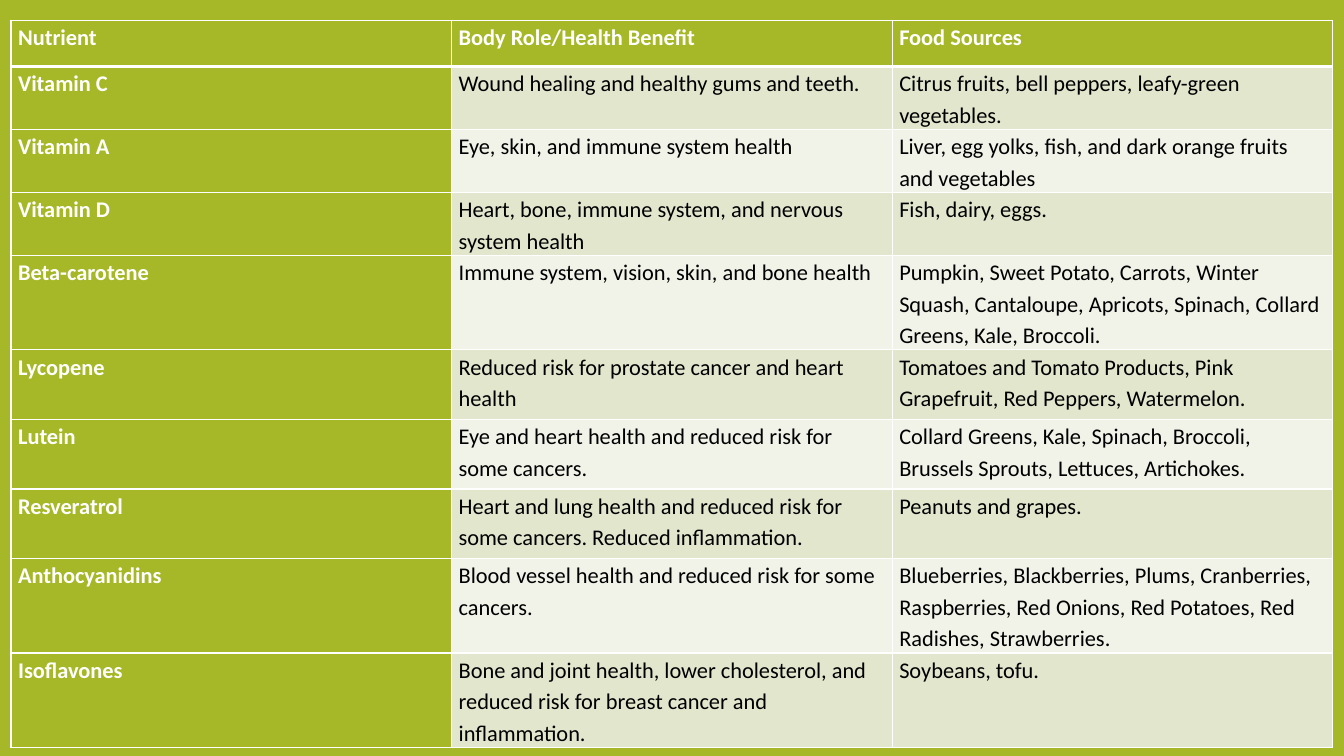
"""Build a slide with a table of nutrients, their benefits and food sources."""
from dataclasses import dataclass

import lxml.etree
import pptx
import pptx.dml.color
import pptx.oxml.ns
import pptx.table
import pptx.util

HUES = {
    "green": "A6B727",
    "dark": "E1E6CD",
    "light": "F1F3E8",
    "white": "FFFFFF",
    "black": "000000",
}
FONT = "Calibri"
WIDTH = 4.37


@dataclass
class Entry:
    name: str
    role: str
    foods: str
    height: float


ROWS = [
    Entry("Nutrient", "Body Role/Health Benefit", "Food Sources", 0.46),
    Entry("Vitamin C", "Wound healing and healthy gums and teeth.",
          "Citrus fruits, bell peppers, leafy-green vegetables.", 0.59),
    Entry("Vitamin A", "Eye, skin, and immune system health",
          "Liver, egg yolks, fish, and dark orange fruits and vegetables", 0.59),
    Entry("Vitamin D", "Heart, bone, immune system, and nervous system health",
          "Fish, dairy, eggs.", 0.59),
    Entry("Beta-carotene", "Immune system, vision, skin, and bone health",
          "Pumpkin, Sweet Potato, Carrots, Winter Squash, Cantaloupe, Apricots, "
          "Spinach, Collard Greens, Kale, Broccoli.", 0.93),
    Entry("Lycopene", "Reduced risk for prostate cancer and heart health",
          "Tomatoes and Tomato Products, Pink Grapefruit, Red Peppers, Watermelon.", 0.69),
    Entry("Lutein", "Eye and heart health and reduced risk for some cancers.",
          "Collard Greens, Kale, Spinach, Broccoli, Brussels Sprouts, Lettuces, "
          "Artichokes.", 0.69),
    Entry("Resveratrol",
          "Heart and lung health and reduced risk for some cancers. Reduced inflammation.",
          "Peanuts and grapes.", 0.69),
    Entry("Anthocyanidins", "Blood vessel health and reduced risk for some cancers.",
          "Blueberries, Blackberries, Plums, Cranberries, Raspberries, Red Onions, "
          "Red Potatoes, Red Radishes, Strawberries.", 0.93),
    Entry("Isoflavones",
          "Bone and joint health, lower cholesterol, and reduced risk for breast "
          "cancer and inflammation.", "Soybeans, tofu.", 0.89),
]


def hue(name: str) -> pptx.dml.color.RGBColor:
    return pptx.dml.color.RGBColor.from_string(HUES[name])


def edge(cell: pptx.table._Cell, side: str, size: float) -> None:
    tag = pptx.oxml.ns.qn
    line = lxml.etree.SubElement(cell._tc.get_or_add_tcPr(), tag(f"a:ln{side}"),
                                 w=str(pptx.util.Pt(size)))
    fill = lxml.etree.SubElement(line, tag("a:solidFill"))
    lxml.etree.SubElement(fill, tag("a:srgbClr"), val=HUES["white"])


def draw(cell: pptx.table._Cell, text: str, row: int, col: int) -> None:
    head = row == 0 or col == 0
    for side in "LRTB":
        thick = (row, side) in ((0, "B"), (1, "T"))
        edge(cell, side, 3 if thick else 1)
    cell.fill.solid()
    cell.fill.fore_color.rgb = hue("green" if head else "dark" if row % 2 else "light")
    cell.margin_left = cell.margin_right = pptx.util.Inches(0.07)
    cell.margin_top = cell.margin_bottom = 0
    para = cell.text_frame.paragraphs[0]
    para.line_spacing = 1.15
    run = para.add_run()
    run.text = text
    run.font.name = FONT
    run.font.size = pptx.util.Pt(16)
    run.font.bold = head
    run.font.color.rgb = hue("white" if head else "black")


def main() -> None:
    inch = pptx.util.Inches
    deck = pptx.Presentation()
    deck.slide_width, deck.slide_height = inch(13.33), inch(7.5)
    slide = deck.slides.add_slide(deck.slide_layouts[6])
    slide.background.fill.solid()
    slide.background.fill.fore_color.rgb = hue("green")
    table = slide.shapes.add_table(
        len(ROWS), 3, inch(0.11), inch(0.2), inch(3 * WIDTH),
        inch(sum(entry.height for entry in ROWS))).table
    for column in table.columns:
        column.width = inch(WIDTH)
    for row, entry in enumerate(ROWS):
        table.rows[row].height = inch(entry.height)
        for col, text in enumerate((entry.name, entry.role, entry.foods)):
            draw(table.cell(row, col), text, row, col)
    deck.save("out.pptx")


if __name__ == "__main__":
    main()
